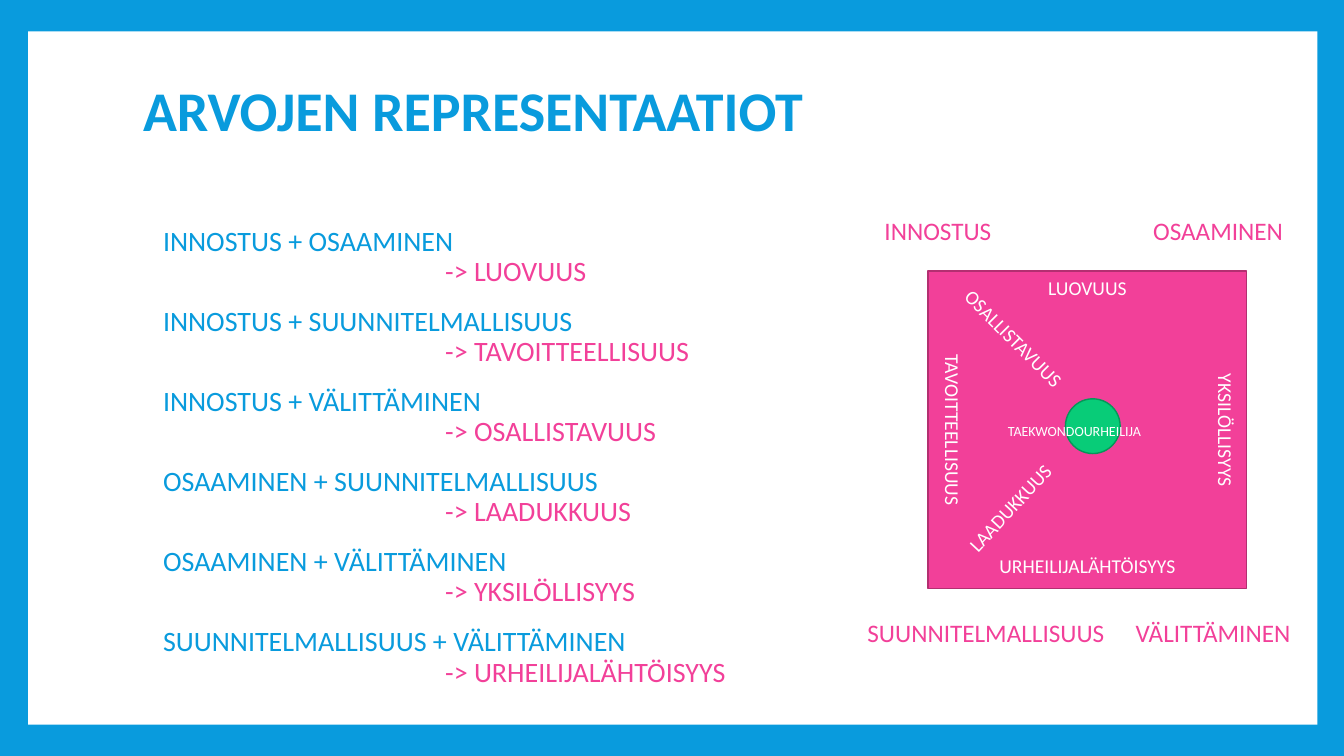
"""Build the slide that shows how pairs of values combine in a taekwondo athlete."""
from pptx import Presentation
from pptx.dml.color import RGBColor
from pptx.enum.shapes import MSO_SHAPE as Shape
from pptx.enum.text import MSO_ANCHOR as Anchor, PP_ALIGN as Align
from pptx.util import Cm, Pt

BLUE = RGBColor(0x09, 0x9B, 0xDD)
PINK = RGBColor(0xF2, 0x40, 0x99)
DARK_PINK = RGBColor(0xB3, 0x2F, 0x71)
GREEN = RGBColor(0x08, 0xCC, 0x78)
DARK_GREEN = RGBColor(0x06, 0x97, 0x59)
WHITE = RGBColor(0xFF, 0xFF, 0xFF)
FONT = "Calibri"


def add_figure(kind, left, top, width, height, fill, line=None):
    figure = page.shapes.add_shape(kind, Cm(left), Cm(top), Cm(width), Cm(height))
    figure.shadow.inherit = False
    figure.fill.solid()
    figure.fill.fore_color.rgb = fill
    if line is None:
        figure.line.fill.background()
    else:
        figure.line.color.rgb = line
        figure.line.width = Pt(1)


def add_label(text, left, top, width, height, size, color, align=Align.LEFT, turn=0):
    box = page.shapes.add_textbox(Cm(left), Cm(top), Cm(width), Cm(height))
    box.rotation = turn
    box.text_frame.word_wrap = True
    para = box.text_frame.paragraphs[0]
    para.text = text
    para.alignment = align
    para.font.name = FONT
    para.font.size = Pt(size)
    para.font.color.rgb = color


deck = Presentation()
deck.slide_width, deck.slide_height = Cm(33.87), Cm(19.05)
page = deck.slides.add_slide(deck.slide_layouts[5])
page.background.fill.solid()
page.background.fill.fore_color.rgb = BLUE

add_figure(Shape.RECTANGLE, 0.71, 0.79, 32.49, 17.47, WHITE)
add_figure(Shape.RECTANGLE, 23.39, 6.83, 8.03, 8, PINK, DARK_PINK)

title = page.shapes.title
page.shapes._spTree.append(title._element)
title.left, title.top, title.width, title.height = Cm(3.35), Cm(0.79), Cm(27.18), Cm(4.19)
title.text_frame.vertical_anchor = Anchor.MIDDLE
heading = title.text_frame.paragraphs[0]
heading.text = "ARVOJEN REPRESENTAATIOT"
heading.alignment = Align.LEFT
heading.line_spacing = 0.85
heading.font.name = FONT
heading.font.size = Pt(40)
heading.font.bold = True
heading.font.color.rgb = BLUE

pairs = [
    ("INNOSTUS + OSAAMINEN", "LUOVUUS"),
    ("INNOSTUS + SUUNNITELMALLISUUS", "TAVOITTEELLISUUS"),
    ("INNOSTUS + VÄLITTÄMINEN", "OSALLISTAVUUS"),
    ("OSAAMINEN + SUUNNITELMALLISUUS", "LAADUKKUUS"),
    ("OSAAMINEN + VÄLITTÄMINEN", "YKSILÖLLISYYS"),
    ("SUUNNITELMALLISUUS + VÄLITTÄMINEN", "URHEILIJALÄHTÖISYYS"),
]
body = page.shapes.add_textbox(Cm(3.35), Cm(5.6), Cm(18.21), Cm(12.47)).text_frame
body.word_wrap = True
for number, (values, result) in enumerate(pairs):
    lines = [
        (values, BLUE, 0.51, 12 if number else 0, 0),
        (f"-> {result}", PINK, 7.62, 0, 2),
    ]
    for text, color, indent, before, after in lines:
        para = body.add_paragraph() if body.text else body.paragraphs[0]
        para.text = text
        para.line_spacing = 0.9
        para.space_before, para.space_after = Pt(before), Pt(after)
        para.font.name = FONT
        para.font.size = Pt(20)
        para.font.color.rgb = color
        para._p.get_or_add_pPr().set("marL", str(Cm(indent)))

corners = [
    ("INNOSTUS", 22.04, 5.3, 3.89),
    ("OSAAMINEN", 28.81, 5.3, 4.52),
    ("SUUNNITELMALLISUUS", 21.61, 15.44, 7.24),
    ("VÄLITTÄMINEN", 28.37, 15.44, 5.87),
]
for text, left, top, width in corners:
    add_label(text, left, top, width, 1.02, 18, PINK)

add_figure(Shape.OVAL, 26.85, 10.05, 1.38, 1.38, GREEN, DARK_GREEN)
add_label("TAEKWONDOURHEILIJA", 25.15, 10.53, 4.67, 0.69, 10, WHITE)

links = [
    ("URHEILIJALÄHTÖISYYS", 23.39, 13.83, 0),
    ("LUOVUUS", 23.39, 6.83, 0),
    ("YKSILÖLLISYYS", 26.87, 10.41, 90),
    ("TAVOITTEELLISUUS", 19.99, 10.41, 90),
    ("LAADUKKUUS", 21.44, 12.37, 312.9),
    ("OSALLISTAVUUS", 21.53, 8.1, 45),
]
for text, left, top, turn in links:
    add_label(text, left, top, 8.03, 0.86, 14, WHITE, Align.CENTER, turn)

deck.save("out.pptx")
